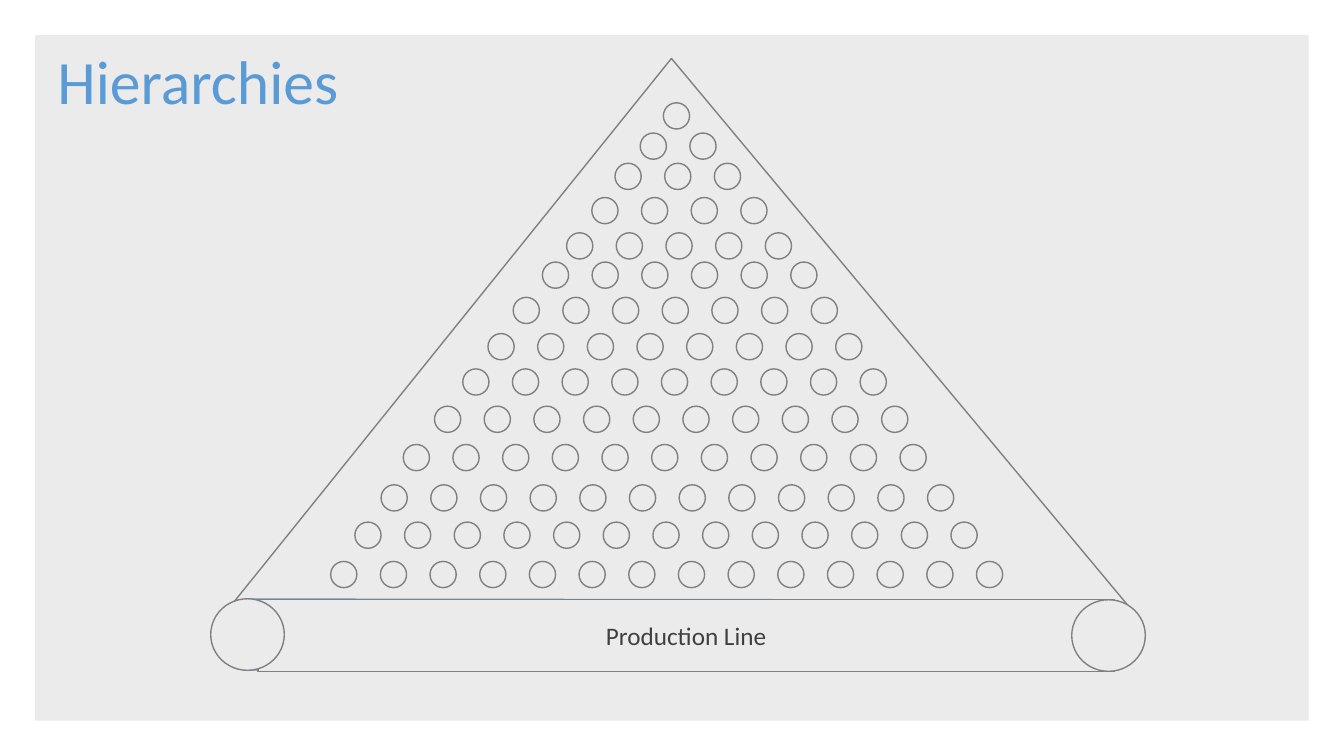
import pptx
import pptx.util
import pptx.dml.color
import pptx.enum.shapes
import pptx.enum.text
from lxml import etree

Inches = pptx.util.Inches
Pt = pptx.util.Pt
RGBColor = pptx.dml.color.RGBColor
SHAPE = pptx.enum.shapes.MSO_SHAPE
ALIGN = pptx.enum.text.PP_ALIGN
ANCHOR = pptx.enum.text.MSO_ANCHOR

TITLE = "Hierarchies"
LABEL = "Production Line"
FONT = "Calibri"

BLUE = RGBColor(0x5B, 0x9B, 0xD5)
PANEL = RGBColor(0xEB, 0xEB, 0xEB)
GRAY = RGBColor(0x80, 0x80, 0x80)
DARK = RGBColor(0x40, 0x40, 0x40)

ROWS = [
    (6.58, 1.02), (6.35, 1.32), (6.1, 1.62), (5.87, 1.96), (5.62, 2.31),
    (5.38, 2.6), (5.09, 2.95), (4.84, 3.31), (4.59, 3.66), (4.31, 4.03),
    (4.0, 4.41), (3.78, 4.81), (3.52, 5.18), (3.28, 5.57),
]
DOT = 0.26
PITCH = 0.4927
BELT_EDGES = [(5.94, 5.95), (6.65, 6.66)]
ROLLERS = [(10.63, 5.95), (2.09, 5.94)]


def add_text(tf, text, size, color, align):
    tf.word_wrap = True
    tf.vertical_anchor = ANCHOR.MIDDLE
    p = tf.paragraphs[0]
    p.alignment = align
    r = p.add_run()
    r.text = text
    r.font.name = FONT
    r.font.size = Pt(size)
    r.font.color.rgb = color
    return p


def add_gray_shape(s, kind, x, y, w, h, outlined=True):
    sp = s.shapes.add_shape(kind, Inches(x), Inches(y), Inches(w), Inches(h))
    sp.shadow.inherit = False
    sp.fill.solid()
    sp.fill.fore_color.rgb = PANEL
    if outlined:
        sp.line.color.rgb = GRAY
        sp.line.width = Pt(1)
    else:
        sp.line.fill.background()
    return sp


def main():
    prs = pptx.Presentation()
    prs.slide_width = Inches(13.33)
    prs.slide_height = Inches(7.5)
    s = prs.slides.add_slide(prs.slide_layouts[5])

    panel = add_gray_shape(s, SHAPE.RECTANGLE, 0.35, 0.35, 12.63, 6.8, outlined=False)
    title = s.shapes.title
    title.element.addprevious(panel.element)
    title.left, title.top = Inches(0.47), Inches(0.48)
    title.width, title.height = Inches(11.5), Inches(0.71)
    title.text_frame.auto_size = pptx.enum.text.MSO_AUTO_SIZE.NONE
    p = add_text(title.text_frame, TITLE, size=44, color=BLUE, align=ALIGN.LEFT)
    p.line_spacing = 0.9

    pyramid = add_gray_shape(s, SHAPE.ISOSCELES_TRIANGLE, 2.29, 0.58, 8.9, 5.43)
    pyramid.adjustments[0] = 0.491

    for count, (left, top) in enumerate(ROWS, start=1):
        for i in range(count):
            add_gray_shape(s, SHAPE.OVAL, left + i * PITCH, top, DOT, DOT)

    for y1, y2 in BELT_EDGES:
        edge = s.shapes.add_connector(
            pptx.enum.shapes.MSO_CONNECTOR.STRAIGHT,
            Inches(2.46), Inches(y1), Inches(10.99), Inches(y2))
        edge.line.color.rgb = BLUE
        edge.line.width = Pt(0.5)
        etree.SubElement(edge.element.spPr, pptx.oxml.ns.qn("a:effectLst"))

    belt = add_gray_shape(s, SHAPE.RECTANGLE, 2.56, 5.95, 8.49, 0.71)
    add_text(belt.text_frame, LABEL, size=18, color=DARK, align=ALIGN.CENTER)

    for x, y in ROLLERS:
        add_gray_shape(s, SHAPE.OVAL, x, y, 0.73, 0.71)

    prs.save("out.pptx")


if __name__ == "__main__":
    main()
